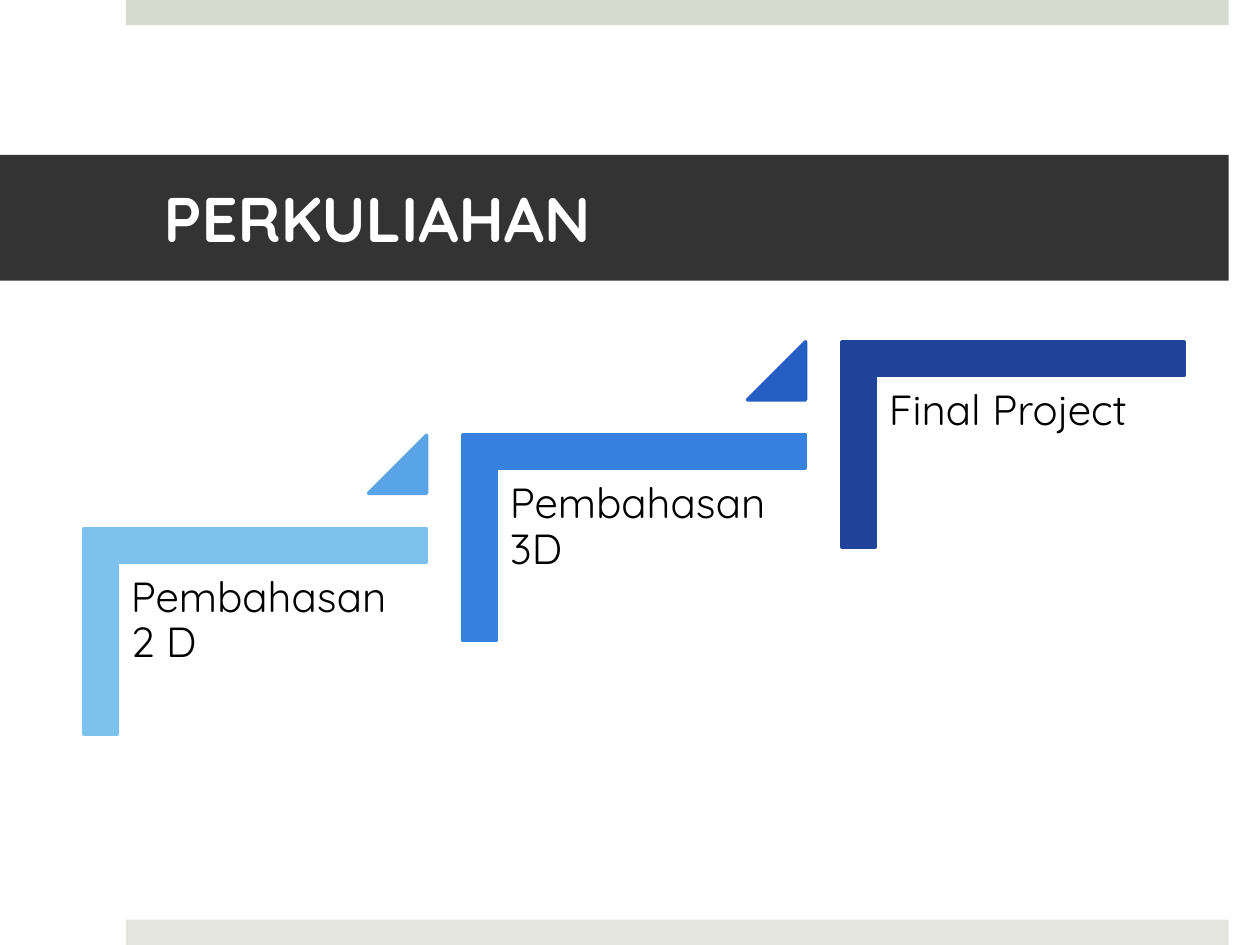
import pptx
import pptx.util
import pptx.dml.color
import pptx.enum.shapes
import pptx.enum.text

Cm = pptx.util.Cm
Pt = pptx.util.Pt
KINDS = pptx.enum.shapes.MSO_SHAPE
ANCHOR = pptx.enum.text.MSO_ANCHOR
ALIGN = pptx.enum.text.PP_ALIGN

COLOURS = {
    "top bar": "D6D9CD",
    "bottom bar": "E4E6DE",
    "banner": "333333",
    "title": "FFFFFF",
    "label": "000000",
}
STEPS = [
    {"label": "Pembahasan 2 D", "corner": "7DC1EF", "triangle": "59A3E7"},
    {"label": "Pembahasan 3D", "corner": "3680DE", "triangle": "255FC3"},
    {"label": "Final Project", "corner": "21449B", "triangle": None},
]


def rgb(colour):
    return pptx.dml.color.RGBColor.from_string(colour)


def apply(target, values):
    for name, value in values.items():
        setattr(target, name, value)


def add_filled(shapes, kind, box, colour, line_width=None):
    shape = shapes.add_shape(kind, *(Cm(length) for length in box))
    shape.shadow.inherit = False
    shape.fill.solid()
    shape.fill.fore_color.rgb = rgb(colour)
    if line_width:
        shape.line.width = Pt(line_width)
        shape.line.color.rgb = rgb(colour)
    else:
        shape.line.fill.background()
    return shape


def write(frame, text, frame_format, para_format, font_format, colour):
    apply(frame, frame_format)
    para = frame.paragraphs[0]
    apply(para, para_format)
    span = para.add_run()
    span.text = text
    apply(span.font, {"name": "Quicksand", **font_format})
    span.font.color.rgb = rgb(colour)


def add_bars(page, box):
    left, top, width, height = box
    thickness = 0.51
    add_filled(page.shapes, KINDS.RECTANGLE,
               (left, top, width, thickness), COLOURS["top bar"])
    add_filled(page.shapes, KINDS.RECTANGLE,
               (left, top + height - thickness, width, thickness),
               COLOURS["bottom bar"])


def place_title(page, box, text):
    title = page.shapes.title
    apply(title, dict(zip(("left", "top", "width", "height"), map(Cm, box))))
    title.fill.solid()
    title.fill.fore_color.rgb = rgb(COLOURS["banner"])
    write(
        title.text_frame, text,
        {"margin_left": Cm(3.3), "margin_right": Cm(0.76),
         "margin_top": Cm(0.13), "margin_bottom": Cm(0.13),
         "vertical_anchor": ANCHOR.MIDDLE, "word_wrap": True},
        {"alignment": ALIGN.LEFT},
        {"size": Pt(36), "bold": True},
        COLOURS["title"],
    )


def add_step(shapes, box, rise, step):
    left, top, width, height = box
    inset, side = 0.7, 1.17
    corner = add_filled(
        shapes, KINDS.CORNER,
        (left + (width - height) / 2, top + (height - width) / 2, height, width),
        step["corner"], 2)
    corner.rotation = 90
    for index in range(2):
        corner.adjustments[index] = 0.161

    label = shapes.add_textbox(Cm(left + inset), Cm(top + inset), Cm(6.25), Cm(5.46))
    margins = {f"margin_{edge}": Cm(0.25) for edge in ("left", "top", "right", "bottom")}
    write(
        label.text_frame, step["label"],
        {**margins, "vertical_anchor": ANCHOR.TOP, "word_wrap": True},
        {"alignment": ALIGN.LEFT, "line_spacing": 0.9, "space_after": Pt(8.4)},
        {"size": Pt(24)},
        COLOURS["label"],
    )

    if step["triangle"]:
        triangle = add_filled(
            shapes, KINDS.ISOSCELES_TRIANGLE,
            (left + width - side, top - rise, side, side), step["triangle"], 2)
        triangle.adjustments[0] = 1


def add_staircase(page, box):
    left, top, width, height = box
    step_width, step_height = 6.91, 4.14
    gaps = len(STEPS) - 1
    run = (width - step_width) / gaps
    rise = (height - step_height) / gaps
    group = page.shapes.add_group_shape()
    for index, step in enumerate(STEPS):
        step_box = (left + index * run, top + (gaps - index) * rise,
                    step_width, step_height)
        add_step(group.shapes, step_box, rise, step)


def main():
    deck = pptx.Presentation()
    deck.slide_width, deck.slide_height = Cm(25.4), Cm(19.05)
    page = deck.slides.add_slide(deck.slide_layouts[5])
    add_bars(page, (2.54, 0, 22.23, 19.05))
    place_title(page, (0, 3.12, 24.77, 2.54), "PERKULIAHAN")
    add_staircase(page, (1.69, 6.89, 22.19, 7.91))
    deck.save("out.pptx")


if __name__ == "__main__":
    main()
